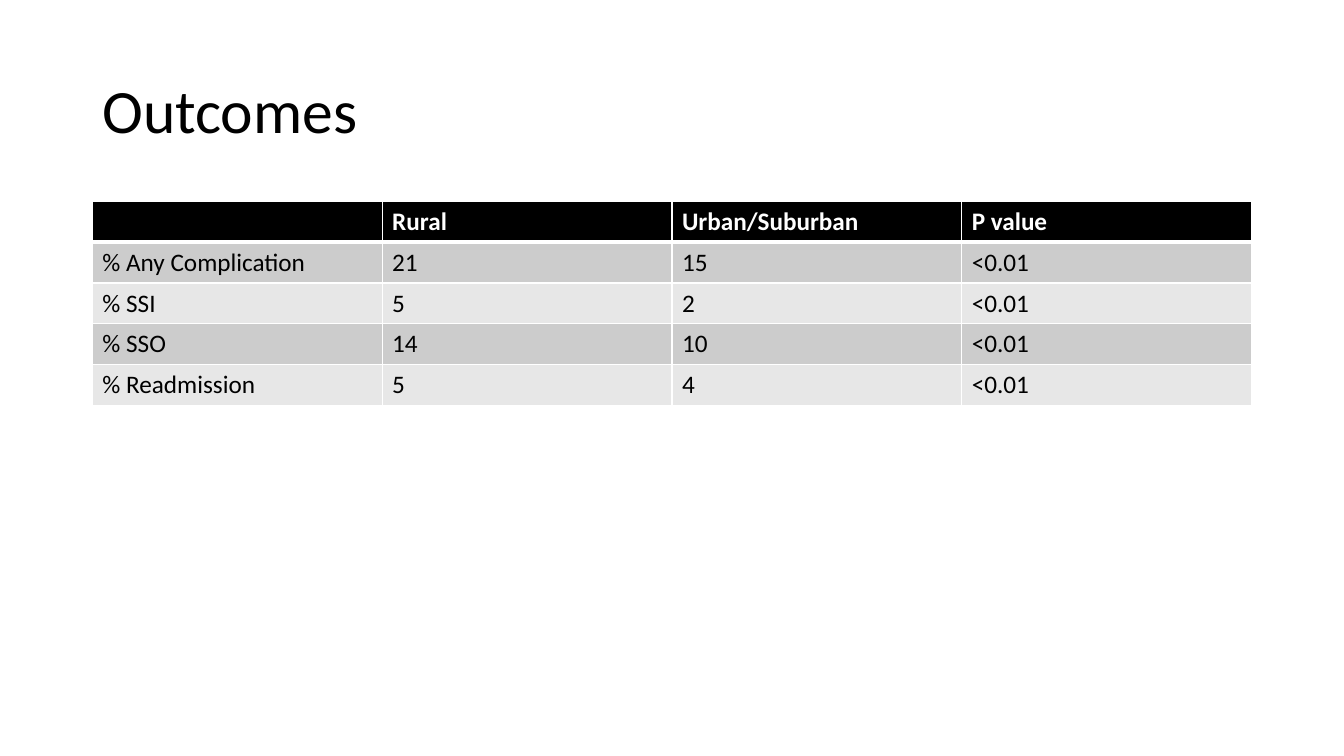
import pptx
import pptx.util
import pptx.dml.color
import pptx.enum.text
import pptx.oxml.ns
import lxml.etree

Pt = pptx.util.Pt
HUES = {"ink": "000000", "paper": "FFFFFF", "dark": "CCCCCC", "light": "E7E7E7"}
ROWS = [
    ["", "Rural", "Urban/Suburban", "P value"],
    ["% Any Complication", "21", "15", "<0.01"],
    ["% SSI", "5", "2", "<0.01"],
    ["% SSO", "14", "10", "<0.01"],
    ["% Readmission", "5", "4", "<0.01"],
]
TITLE = {"name": "Calibri", "size": Pt(44), "bold": False}
HEAD = {"name": "Calibri", "size": Pt(18), "bold": True}
BODY = {**HEAD, "bold": False}


def tint(name):
    return pptx.dml.color.RGBColor.from_string(HUES[name])


def style(font, form, hue):
    for key, value in form.items():
        setattr(font, key, value)
    font.color.rgb = tint(hue)


def edge(cell, side, width):
    qn = pptx.oxml.ns.qn
    props = cell._tc.get_or_add_tcPr()
    line = lxml.etree.SubElement(props, qn("a:" + side), w=str(Pt(width)))
    fill = lxml.etree.SubElement(line, qn("a:solidFill"))
    lxml.etree.SubElement(fill, qn("a:srgbClr"), val=HUES["paper"])


def title(slide, box, text):
    frame = slide.shapes.add_textbox(*map(Pt, box)).text_frame
    frame.word_wrap = True
    frame.vertical_anchor = pptx.enum.text.MSO_ANCHOR.MIDDLE
    para = frame.paragraphs[0]
    para.line_spacing = 0.9
    run = para.add_run()
    run.text = text
    style(run.font, TITLE, "ink")


def table(slide, box, rows):
    grid = slide.shapes.add_table(len(rows), len(rows[0]), *map(Pt, box)).table
    for r, row in enumerate(rows):
        form, hue = (BODY, "ink") if r else (HEAD, "paper")
        back = ("light" if r % 2 == 0 else "dark") if r else "ink"
        sides = {"lnL": 1, "lnR": 1, "lnT": 3 if r == 1 else 1, "lnB": 1 if r else 3}
        for c, text in enumerate(row):
            cell = grid.cell(r, c)
            for side, width in sides.items():
                edge(cell, side, width)
            cell.fill.solid()
            cell.fill.fore_color.rgb = tint(back)
            if text:
                run = cell.text_frame.paragraphs[0].add_run()
                run.text = text
                style(run.font, form, hue)


def main():
    deck = pptx.Presentation()
    deck.slide_width, deck.slide_height = Pt(960), Pt(540)
    slide = deck.slides.add_slide(deck.slide_layouts[6])
    left, width = 66, 828
    title(slide, (left, 28.75, width, 104.4), "Outcomes")
    table(slide, (left, 143.75, width, 146), ROWS)
    deck.save("out.pptx")


if __name__ == "__main__":
    main()
